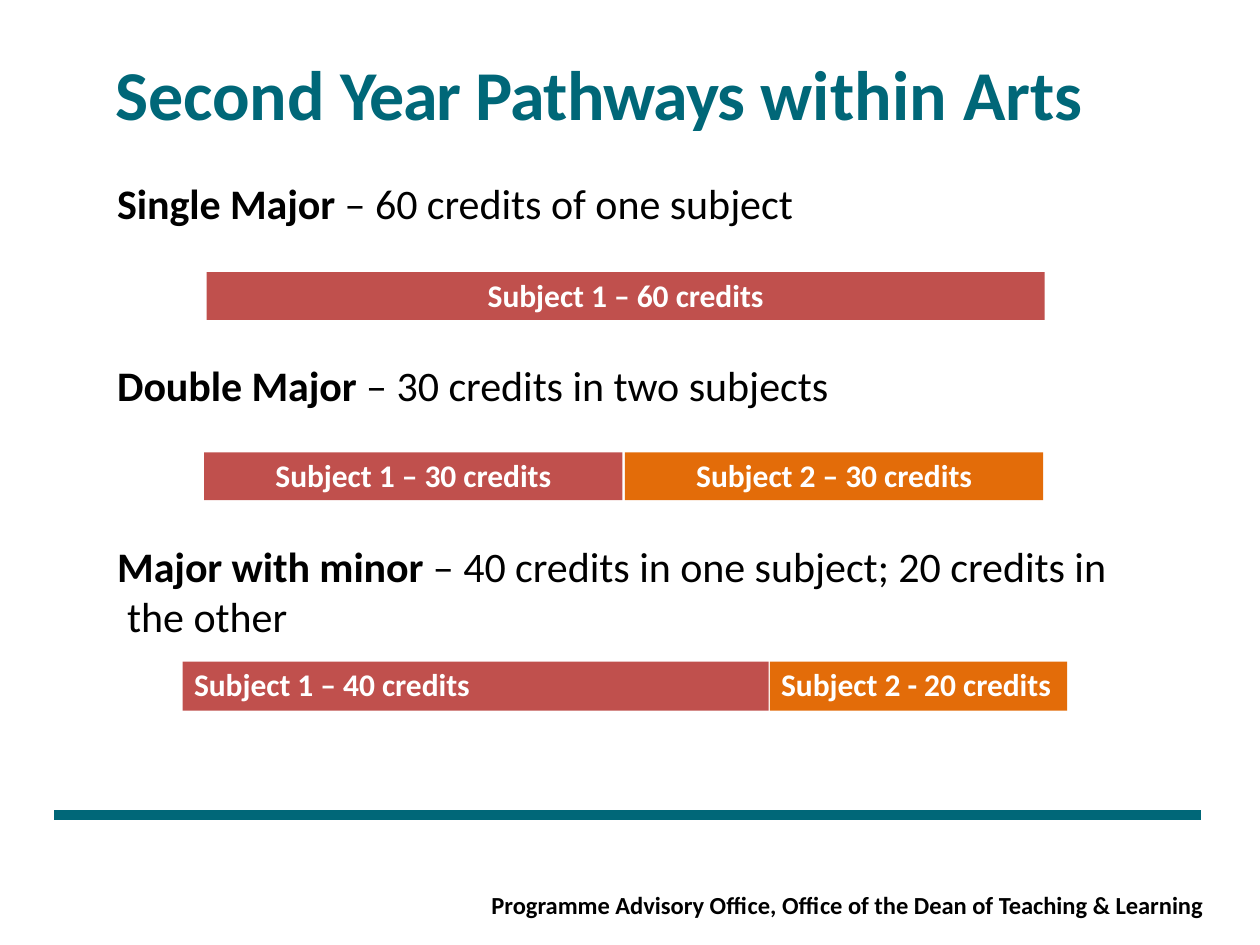
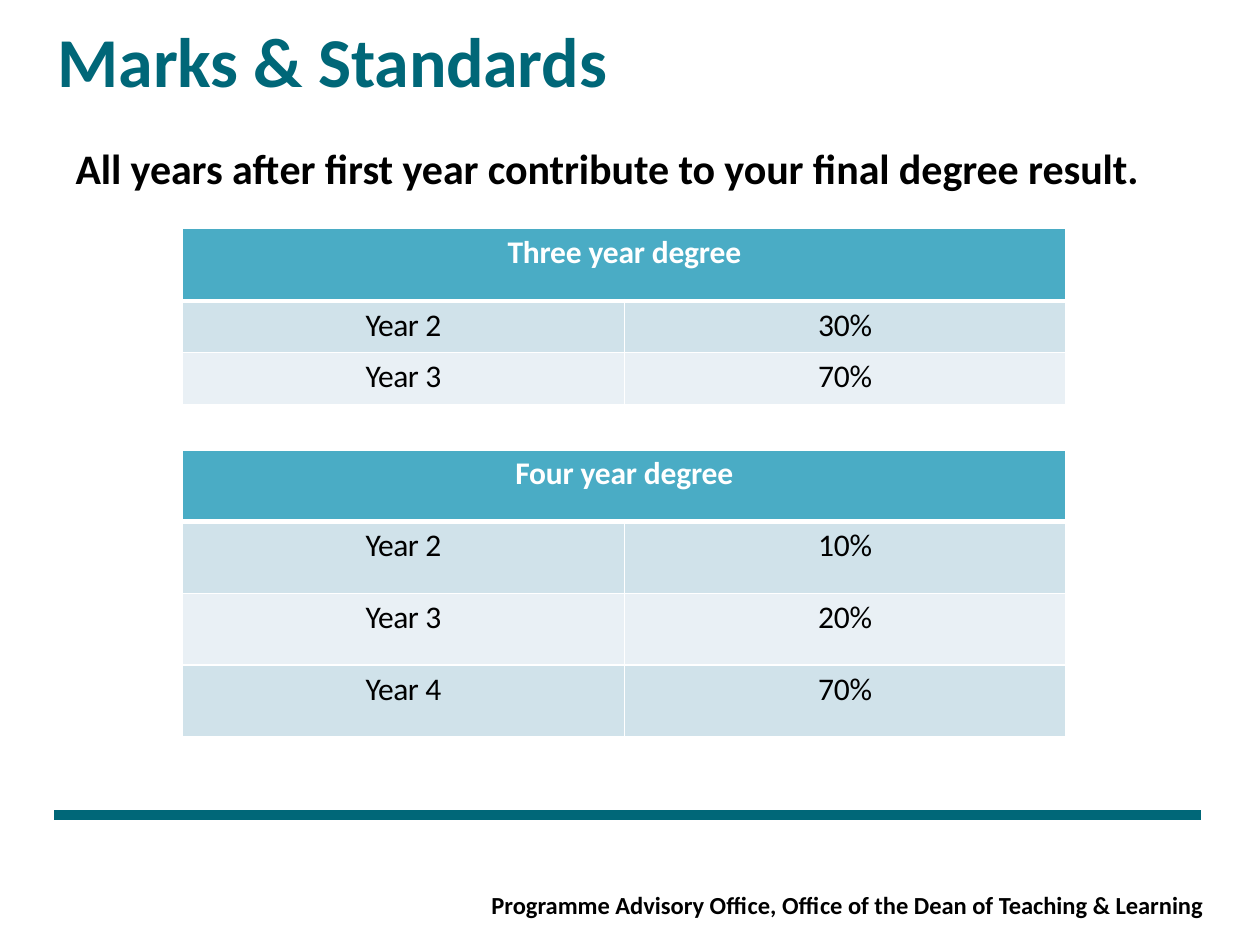
"""Build two slides on degree pathways and how years count towards the result."""
from dataclasses import dataclass
from typing import NamedTuple

from lxml import etree
from pptx import Presentation
from pptx.dml.color import RGBColor
from pptx.enum.shapes import MSO_CONNECTOR, MSO_SHAPE
from pptx.enum.text import MSO_ANCHOR, PP_ALIGN
from pptx.oxml.ns import qn
from pptx.slide import Slide
from pptx.table import _Cell
from pptx.text.text import TextFrame, _Paragraph
from pptx.util import Inches, Pt

STRAIGHT = MSO_CONNECTOR.STRAIGHT
RECTANGLE = MSO_SHAPE.RECTANGLE
TOP = MSO_ANCHOR.TOP
LEFT, CENTER = PP_ALIGN.LEFT, PP_ALIGN.CENTER


@dataclass(frozen=True)
class Theme:
    """Colours, font and type sizes of both slides."""
    font: str = "Calibri"
    teal: str = "006778"
    black: str = "000000"
    white: str = "FFFFFF"
    first_subject: str = "C0504D"
    second_subject: str = "E36C09"
    header: str = "4AACC5"
    bands: tuple[str, str] = ("D0E2EA", "E9F0F5")
    title_size: int = 40
    body_size: int = 24
    label_size: int = 18
    footer_size: int = 14


THEME = Theme()


class Run(NamedTuple):
    """A stretch of text with its weight and letter spacing in points."""
    text: str
    bold: bool = True
    spacing: float = -0.1


class Box(NamedTuple):
    """Left, top, width and height in inches."""
    left: float
    top: float
    width: float
    height: float

    def lengths(self) -> list[Inches]:
        """Return the four values as lengths."""
        return [Inches(value) for value in self]


@dataclass(frozen=True)
class Bar:
    """One subject's share of a pathway."""
    label: str
    left: float
    width: float
    color: str
    alignment: PP_ALIGN = CENTER


@dataclass(frozen=True)
class Pathway:
    """A named pathway, its description and its credit bars."""
    name: str
    description: str
    text_box: Box
    bar_top: float
    bar_height: float
    bars: tuple[Bar, ...]


@dataclass(frozen=True)
class Degree:
    """A degree length with the weight of each year."""
    heading: str
    top: float
    row_heights: tuple[float, ...]
    weights: tuple[tuple[str, str], ...]


PATHWAYS = (
    Pathway("Single Major ", "– 60 credits of one subject", Box(0.91, 1.4, 5.41, 0.43), 2.16, 0.38, (
        Bar("Subject 1 – 60 credits", 1.64, 6.65, THEME.first_subject),
    )),
    Pathway("Double Major ", "– 30 credits in two subjects", Box(0.91, 2.84, 5.69, 0.43), 3.59, 0.38, (
        Bar("Subject 1 – 30 credits", 1.62, 3.32, THEME.first_subject),
        Bar("Subject 2 – 30 credits", 4.96, 3.32, THEME.second_subject),
    )),
    Pathway("Major with minor ", "– 40 credits in one subject; 20 credits in the other",
            Box(0.91, 4.28, 7.9, 0.83), 5.25, 0.39, (
        Bar("Subject 1 – 40 credits", 1.45, 4.65, THEME.first_subject, LEFT),
        Bar("Subject 2 - 20 credits", 6.11, 2.36, THEME.second_subject, LEFT),
    )),
)

DEGREES = (
    Degree("Three year degree", 1.81, (0.58, 0.41, 0.41), (("2", "30%"), ("3", "70%"))),
    Degree("Four year degree", 3.57, (0.57,) * 4, (("2", "10%"), ("3", "20%"), ("4", "70%"))),
)


def add_runs(paragraph: _Paragraph, runs: list[Run], size: int, color: str) -> None:
    """Append styled runs to a paragraph."""
    for item in runs:
        run = paragraph.add_run()
        run.text = item.text
        run.font.name = THEME.font
        run.font.size = Pt(size)
        run.font.bold = item.bold
        run.font.color.rgb = RGBColor.from_string(color)
        run.font._element.set("spc", str(round(item.spacing * 100)))


def set_frame(frame: TextFrame, left: float, top: float) -> _Paragraph:
    """Set wrapping and insets and return the first paragraph."""
    frame.word_wrap = True
    frame.vertical_anchor = TOP
    frame.margin_left, frame.margin_top = Inches(left), Inches(top)
    frame.margin_right = frame.margin_bottom = Inches(0)
    return frame.paragraphs[0]


def add_text(slide: Slide, box: Box, runs: list[Run], size: int,
             color: str = THEME.black, top_inset: float = 0.01) -> _Paragraph:
    """Add a text box and return its paragraph."""
    shape = slide.shapes.add_textbox(*box.lengths())
    paragraph = set_frame(shape.text_frame, 0.02, top_inset)
    add_runs(paragraph, runs, size, color)
    return paragraph


def add_line(slide: Slide, box: Box, color: str, width: float) -> None:
    """Add a straight line across a box of no height or no width."""
    left, top, across, down = box.lengths()
    line = slide.shapes.add_connector(STRAIGHT, left, top, left + across, top + down)
    line.line.color.rgb = RGBColor.from_string(color)
    line.line.width = Pt(width)
    etree.SubElement(line.element.spPr, qn("a:effectLst"))


def add_frame(slide: Slide, title_box: Box, title: list[Run]) -> None:
    """Add the title, the rule and the footer."""
    add_line(slide, Box(0.43, 6.47, 9.1, 0), THEME.teal, 5.64)
    add_text(slide, title_box, title, THEME.title_size, THEME.teal)
    footer = add_text(slide, Box(3.88, 7.1, 5.68, 0.22),
                      [Run("Programme Advisory Office, Office of the Dean of Teaching & Learning", spacing=-0.04)],
                      THEME.footer_size, top_inset=0)
    footer.line_spacing = Pt(14.3)


def add_bar_edges(slide: Slide, pathway: Pathway) -> None:
    """Add the white edges around and between the bars of a pathway."""
    bars, top = pathway.bars, pathway.bar_top
    left, right = bars[0].left - 0.01, bars[-1].left + bars[-1].width + 0.01
    for edge in [bar.left - 0.01 for bar in bars] + [right]:
        add_line(slide, Box(edge, top - 0.01, 0, pathway.bar_height + 0.05), THEME.white, 1)
    if len(bars) > 1:
        add_line(slide, Box(left, top, right - left, 0), THEME.white, 1)
    add_line(slide, Box(left, top + pathway.bar_height + 0.02, right - left, 0), THEME.white, 3)


def add_pathway(slide: Slide, pathway: Pathway) -> None:
    """Add a pathway's description and its credit bars."""
    runs = [Run(pathway.name, spacing=-0.05), Run(pathway.description, False, -0.03)]
    paragraph = add_text(slide, pathway.text_box, runs, THEME.body_size)
    properties = paragraph._p.get_or_add_pPr()
    properties.set("marL", str(Inches(0.08)))
    properties.set("indent", str(Inches(-0.08)))
    add_bar_edges(slide, pathway)
    for bar in pathway.bars:
        box = Box(bar.left, pathway.bar_top, bar.width, pathway.bar_height)
        shape = slide.shapes.add_shape(RECTANGLE, *box.lengths())
        shape.shadow.inherit = False
        shape.fill.solid()
        shape.fill.fore_color.rgb = RGBColor.from_string(bar.color)
        shape.line.fill.background()
        label = set_frame(shape.text_frame, 0.09 if bar.alignment == LEFT else 0, 0.03)
        label.alignment = bar.alignment
        add_runs(label, [Run(bar.label, spacing=-0.04)], THEME.label_size, THEME.white)


def style_cell(cell: _Cell, color: str, top_width: int, bottom_width: int) -> None:
    """Set white borders, the fill and the insets of a cell."""
    properties = cell._tc.get_or_add_tcPr()
    for side, width in (("L", 1), ("R", 1), ("T", top_width), ("B", bottom_width)):
        border = etree.SubElement(properties, qn(f"a:ln{side}"), w=str(Pt(width)))
        fill = etree.SubElement(border, qn("a:solidFill"))
        etree.SubElement(fill, qn("a:srgbClr"), val=THEME.white)
    cell.fill.solid()
    cell.fill.fore_color.rgb = RGBColor.from_string(color)
    cell.vertical_anchor = TOP
    cell.margin_left = cell.margin_right = cell.margin_bottom = Inches(0)
    cell.margin_top = Inches(0.04)


def add_degree(slide: Slide, degree: Degree) -> None:
    """Add the table of year weights for one degree."""
    box = Box(1.45, degree.top, 7.01, sum(degree.row_heights))
    table = slide.shapes.add_table(len(degree.row_heights), 2, *box.lengths()).table
    for row, height in zip(table.rows, degree.row_heights):
        row.height = Inches(height)
    for column in range(2):
        style_cell(table.cell(0, column), THEME.header, 1, 3)
    table.cell(0, 0).merge(table.cell(0, 1))
    heading = table.cell(0, 0).text_frame.paragraphs[0]
    heading.alignment = CENTER
    add_runs(heading, [Run(degree.heading)], THEME.label_size, THEME.white)
    for row, (year, weight) in enumerate(degree.weights, start=1):
        contents = ([Run("Year ", False, -0.3), Run(year, False, 0)], [Run(weight, False)])
        for column, runs in enumerate(contents):
            cell = table.cell(row, column)
            style_cell(cell, THEME.bands[(row - 1) % 2], 3 if row == 1 else 1, 1)
            paragraph = cell.text_frame.paragraphs[0]
            paragraph.alignment = CENTER
            add_runs(paragraph, runs, THEME.label_size, THEME.black)


def main() -> None:
    """Build and save the presentation."""
    presentation = Presentation()
    presentation.slide_width, presentation.slide_height = Inches(10), Inches(7.5)
    blank = presentation.slide_layouts[6]

    pathways_slide = presentation.slides.add_slide(blank)
    add_frame(pathways_slide, Box(0.9, 0.39, 7.81, 0.69),
              [Run("Second "), Run("Year ", spacing=-0.8), Run("Pathways ", spacing=-0.5),
               Run("within ", spacing=0.1), Run("Arts")])
    for pathway in PATHWAYS:
        add_pathway(pathways_slide, pathway)

    marks_slide = presentation.slides.add_slide(blank)
    add_frame(marks_slide, Box(0.44, 0.13, 4.41, 0.69), [Run("Marks & Standards")])
    add_text(marks_slide, Box(0.58, 1.12, 8.5, 0.42),
             [Run("All years after first year contribute to your final degree result.", spacing=-0.06)],
             THEME.body_size)
    for degree in DEGREES:
        add_degree(marks_slide, degree)

    presentation.save("out.pptx")


if __name__ == "__main__":
    main()
